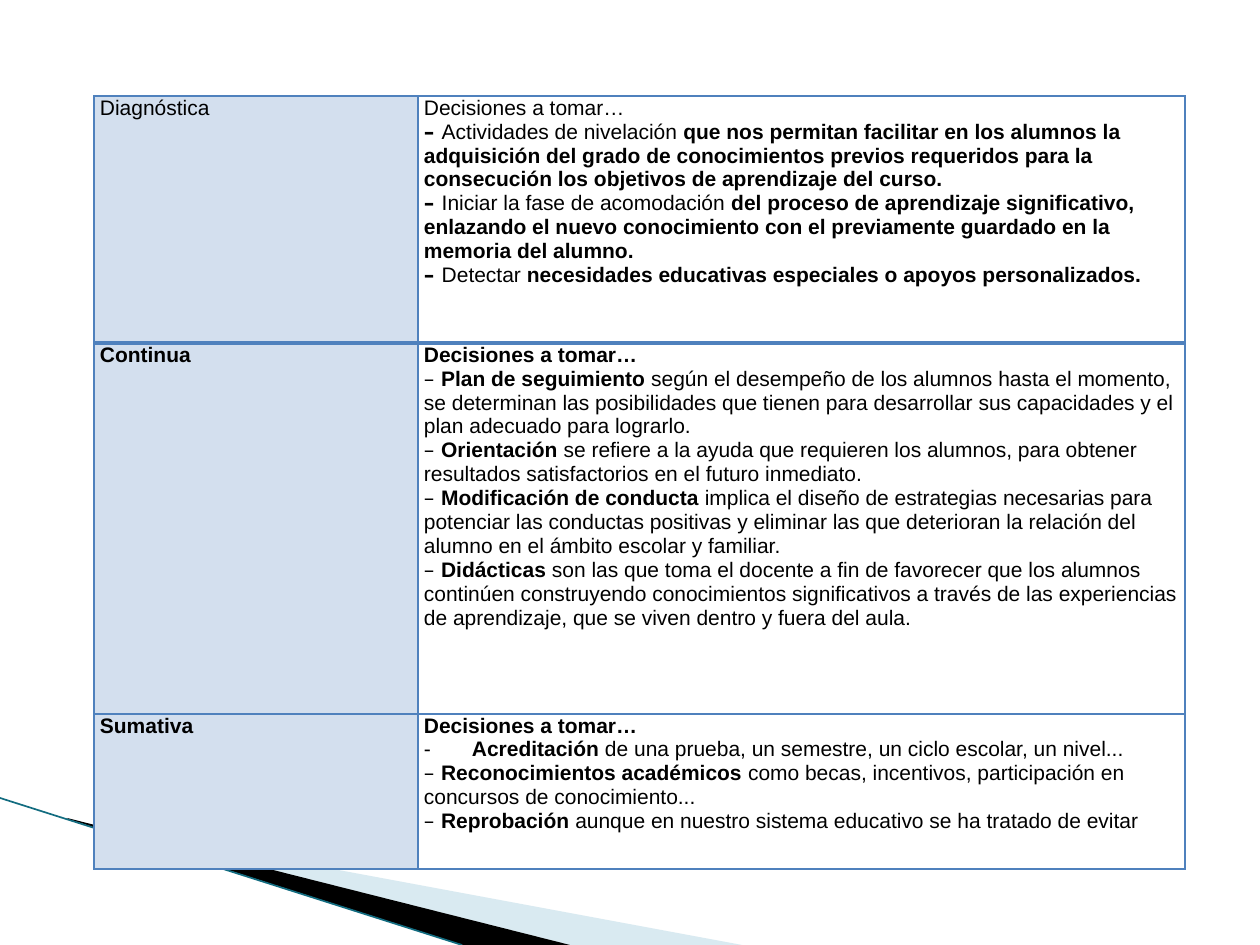
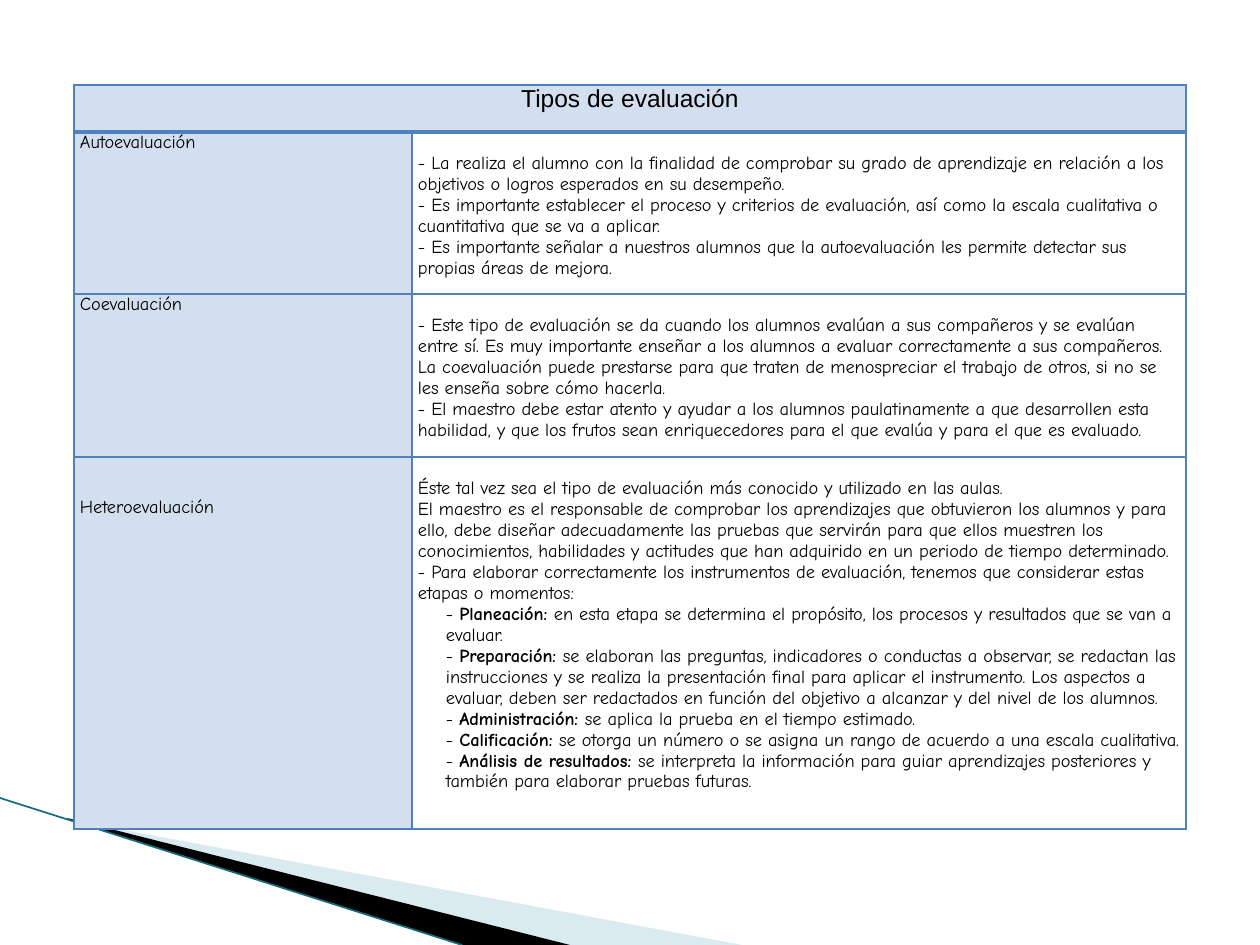
from lxml import etree
from pptx import Presentation
from pptx import util as u
from pptx.dml import color
from pptx.enum import shapes, text
from pptx.oxml import ns

PX = u.Inches(1) / 126
COLORS = {"ink": "000000", "label": "D3DFEE", "border": "4F81BD",
          "band": "A0CBDC", "edge": "126C80"}
DASH = "– "

DECISIONS = [
    ("Diagnóstica", [
        "Decisiones a tomar…",
        "*– *Actividades de nivelación *que nos permitan facilitar en los alumnos la adquisición del grado de conocimientos previos requeridos para la consecución los objetivos de aprendizaje del curso.",
        "*– *Iniciar la fase de acomodación *del proceso de aprendizaje significativo, enlazando el nuevo conocimiento con el previamente guardado en la memoria del alumno.",
        "*– *Detectar *necesidades educativas especiales o apoyos personalizados."]),
    ("*Continua", [
        "*Decisiones a tomar…",
        "– *Plan de seguimiento *según el desempeño de los alumnos hasta el momento, se determinan las posibilidades que tienen para desarrollar sus capacidades y el plan adecuado para lograrlo.",
        "– *Orientación *se refiere a la ayuda que requieren los alumnos, para obtener resultados satisfactorios en el futuro inmediato.",
        "– *Modificación de conducta *implica el diseño de estrategias necesarias para potenciar las conductas positivas y eliminar las que deterioran la relación del alumno en el ámbito escolar y familiar.",
        "– *Didácticas *son las que toma el docente a fin de favorecer que los alumnos continúen construyendo conocimientos significativos a través de las experiencias de aprendizaje, que se viven dentro y fuera del aula."]),
    ("*Sumativa", [
        "*Decisiones a tomar…",
        ("bullet", "*Acreditación *de una prueba, un semestre, un ciclo escolar, un nivel..."),
        "– *Reconocimientos académicos *como becas, incentivos, participación en concursos de conocimiento...",
        "– *Reprobación *aunque en nuestro sistema educativo se ha tratado de evitar"]),
]

KINDS = [
    ("Autoevaluación", [
        "- La realiza el alumno con la finalidad de comprobar su grado de aprendizaje en relación a los objetivos o logros esperados en su desempeño.",
        "- Es importante establecer el proceso y criterios de evaluación, así como la escala cualitativa o cuantitativa que se va a aplicar.",
        "- Es importante señalar a nuestros alumnos que la autoevaluación les permite detectar sus propias áreas de mejora."]),
    ("Coevaluación", [
        "- Este tipo de evaluación se da cuando los alumnos evalúan a sus compañeros y se evalúan entre sí. Es muy importante enseñar a los alumnos a evaluar correctamente a sus compañeros. La coevaluación puede prestarse para que traten de menospreciar el trabajo de otros, si no se les enseña sobre cómo hacerla.",
        "- El maestro debe estar atento y ayudar a los alumnos paulatinamente a que desarrollen esta habilidad, y que los frutos sean enriquecedores para el que evalúa y para el que es evaluado."]),
    ("Heteroevaluación", [
        "Éste tal vez sea el tipo de evaluación más conocido y utilizado en las aulas.",
        "El maestro es el responsable de comprobar los aprendizajes que obtuvieron los alumnos y para ello, debe diseñar adecuadamente las pruebas que servirán para que ellos muestren los conocimientos, habilidades y actitudes que han adquirido en un periodo de tiempo determinado.",
        "- Para elaborar correctamente los instrumentos de evaluación, tenemos que considerar estas etapas o momentos:",
        ("stage", "- *Planeación: *en esta etapa se determina el propósito, los procesos y resultados que se van a evaluar."),
        ("stage", "- *Preparación: *se elaboran las preguntas, indicadores o conductas a observar, se redactan las instrucciones y se realiza la presentación final para aplicar el instrumento. Los aspectos a evaluar, deben ser redactados en función del objetivo a alcanzar y del nivel de los alumnos."),
        ("stage", "- *Administración: *se aplica la prueba en el tiempo estimado."),
        ("stage", "- *Calificación: *se otorga un número o se asigna un rango de acuerdo a una escala cualitativa."),
        ("stage", "- *Análisis de resultados: *se interpreta la información para guiar aprendizajes posteriores y también para elaborar pruebas futuras.")]),
]


def px(length):
    return u.Emu(round(length * PX))


def rgb(name):
    return color.RGBColor.from_string(COLORS[name])


def add_element(parent, tag, **attributes):
    return etree.SubElement(parent, ns.qn(tag), **attributes)


class SlideBuilder:
    def __init__(self, deck):
        self.deck = deck
        self.page = None

    def new_page(self):
        self.page = self.deck.slides.add_slide(self.deck.slide_layouts[6])
        self.outline([(69, 820), (742, 945), (570, 945), (69, 819)], "band", 40)
        self.outline([(67, 818), (570, 945), (463, 945), (68, 819)], "ink")
        self.line((0, 798), (462, 945), "edge", 0.95)

    def outline(self, points, fill, opacity=100):
        builder = self.page.shapes.build_freeform(*points[0], scale=PX)
        builder.add_line_segments(points[1:], close=True)
        shape = builder.convert_to_shape()
        shape.shadow.inherit = False
        shape.fill.solid()
        shape.fill.fore_color.rgb = rgb(fill)
        shape.line.fill.background()
        if opacity < 100:
            shade = shape.fill._xPr.find(".//" + ns.qn("a:srgbClr"))
            add_element(shade, "a:alpha", val=str(opacity * 1000))

    def line(self, start, end, stroke, width):
        line = self.page.shapes.add_connector(
            shapes.MSO_CONNECTOR.STRAIGHT, *map(px, start + end))
        line.line.color.rgb = rgb(stroke)
        line.line.width = u.Pt(width)
        add_element(line._element.spPr, "a:effectLst")

    def table(self, left, top, widths, heights):
        frame = self.page.shapes.add_table(
            len(heights), len(widths), px(left), px(top),
            px(sum(widths)), px(sum(heights)))
        table = frame.table
        table.first_row = table.horz_banding = False
        for column, width in zip(table.columns, widths):
            column.width = px(width)
        for index, (row, height) in enumerate(zip(table.rows, heights)):
            row.height = px(height)
            for cell in row.cells:
                self.borders(cell, top=2.25 if index == 1 else 1,
                             bottom=2.25 if index == 0 else 1)
        return table

    def borders(self, cell, top, bottom):
        properties = cell._tc.get_or_add_tcPr()
        for side, width in zip("LRTB", (1, 1, top, bottom)):
            edge = add_element(properties, "a:ln" + side, w=str(u.Pt(width)))
            fill = add_element(edge, "a:solidFill")
            add_element(fill, "a:srgbClr", val=COLORS["border"])

    def cell(self, cell, lines, font, size, fill=None, gap=0, align=None):
        cell.margin_left = cell.margin_right = px(6)
        cell.margin_top, cell.margin_bottom = px(gap), 0
        if fill:
            cell.fill.solid()
            cell.fill.fore_color.rgb = rgb(fill)
        else:
            cell.fill.background()
        frame = cell.text_frame
        for index, line in enumerate(lines):
            para = frame.add_paragraph() if index else frame.paragraphs[0]
            para.alignment = align
            role, content = line if isinstance(line, tuple) else ("plain", line)
            self.indent(para, role)
            self.spans(para, content, font, size)

    def indent(self, para, role):
        properties = para._p.get_or_add_pPr()
        if role == "stage":
            properties.set("marL", str(px(28)))
        elif role == "bullet":
            properties.set("marL", str(px(48)))
            properties.set("indent", str(px(-48)))
            add_element(properties, "a:buFont", typeface="Arial")
            add_element(properties, "a:buChar", char="-")

    def spans(self, para, content, font, size):
        for index, part in enumerate(content.split("*")):
            if part:
                span = para.add_run()
                span.text = part
                span.font.name = "DejaVu Sans" if part == DASH else font
                span.font.size = u.Pt(size)
                span.font.bold = index % 2 == 1
                span.font.color.rgb = rgb("ink")

    def rows(self, table, first, entries, font, size, label_gaps, body_gap):
        for row, ((label, lines), gap) in enumerate(zip(entries, label_gaps), first):
            self.cell(table.cell(row, 0), [label], font, size, "label", gap)
            self.cell(table.cell(row, 1), lines, font, size, gap=body_gap)


def main():
    deck = Presentation()
    deck.slide_width, deck.slide_height = px(1260), px(945)
    builder = SlideBuilder(deck)

    builder.new_page()
    decisions = builder.table(94, 96, [324, 767], [247, 371, 155])
    builder.rows(decisions, 0, DECISIONS, "Arial", 12, [0, 0, 0], 0)

    builder.new_page()
    kinds = builder.table(74, 85, [338, 774], [47, 162, 163, 372])
    heading = kinds.cell(0, 0)
    heading.merge(kinds.cell(0, 1))
    builder.cell(heading, ["Tipos de evaluación"], "Arial", 14, "label",
                 align=text.PP_ALIGN.CENTER)
    builder.rows(kinds, 1, KINDS, "Comic Neue", 10.5, [0, 0, 40], 21)

    deck.save("out.pptx")


if __name__ == "__main__":
    main()
